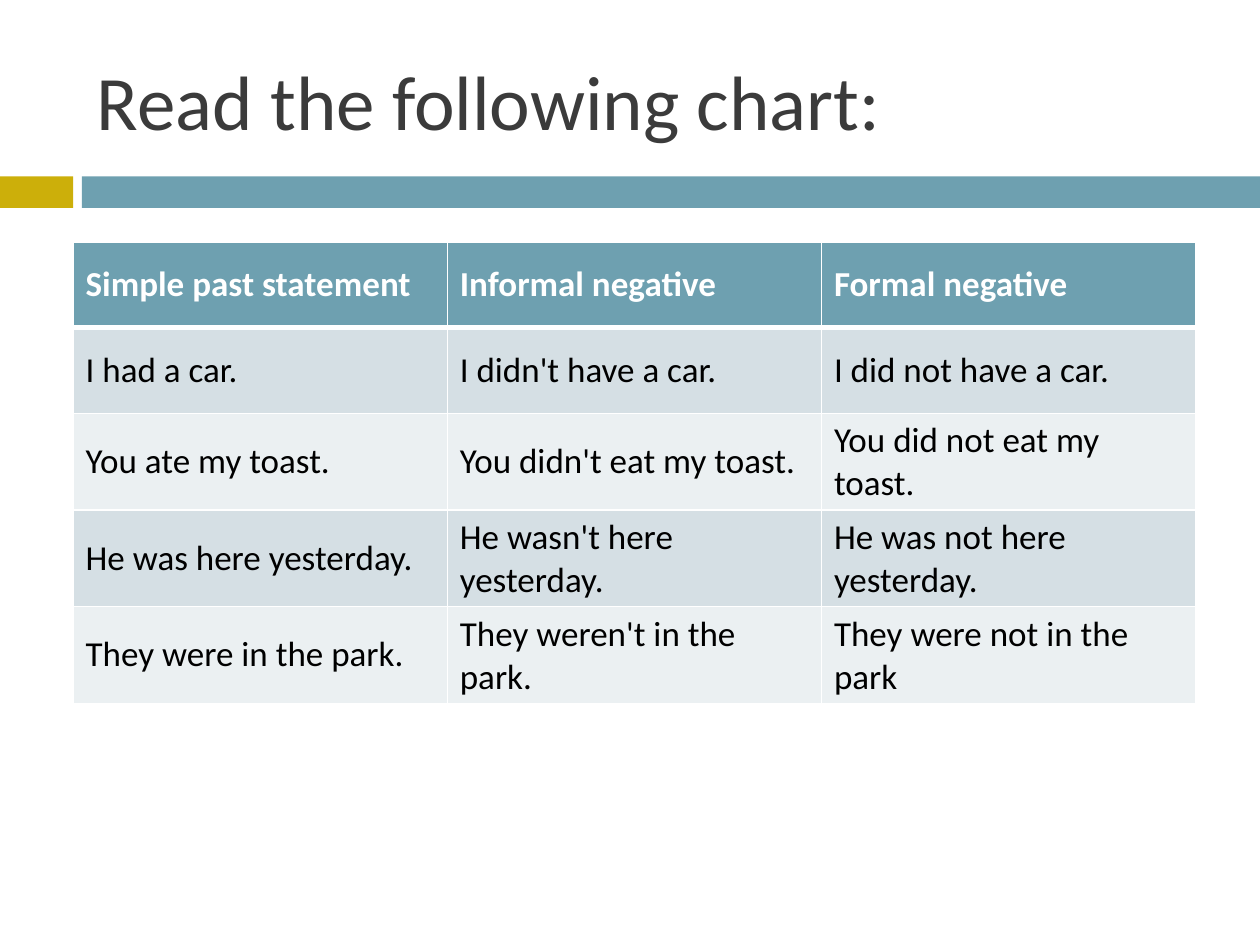
from lxml import etree
from pptx import Presentation, util as u
from pptx.dml.color import RGBColor
from pptx.enum import shapes, text
from pptx.oxml.ns import qn

FONT = "Calibri"
WHITE = RGBColor(0xFF, 0xFF, 0xFF)
BLACK = RGBColor(0x00, 0x00, 0x00)
CHARCOAL = RGBColor(0x3B, 0x3B, 0x3B)
GOLD = RGBColor(0xCC, 0xAF, 0x0A)
TEAL = RGBColor(0x6E, 0xA0, 0xB0)
BANDS = (RGBColor(0xD5, 0xDF, 0xE4), RGBColor(0xEB, 0xF0, 0xF2))

WIDTH, HEIGHT = 10, 7.5
MARGIN = 0.58
BAR_TOP, BAR_HEIGHT, BAR_GAP = 1.4, 0.25, 0.07
COLUMN, ROW = 2.97, 0.68

SENTENCES = (
    ("Simple past statement", "Informal negative", "Formal negative"),
    ("I had a car.", "I didn't have a car.", "I did not have a car."),
    ("You ate my toast.", "You didn't eat my toast.", "You did not eat my toast."),
    ("He was here yesterday.", "He wasn't here yesterday.", "He was not here yesterday."),
    ("They were in the park.", "They weren't in the park.", "They were not in the park"),
)


def inches(*lengths):
    return [u.Inches(length) for length in lengths]


def add_run(p, words, size, color, bold=False):
    r = p.add_run()
    r.text = words
    r.font.name = FONT
    r.font.size = u.Pt(size)
    r.font.bold = bold
    r.font.color.rgb = color


def add_bar(s, left, width, color):
    sp = s.shapes.add_shape(shapes.MSO_SHAPE.RECTANGLE,
                            *inches(left, BAR_TOP, width, BAR_HEIGHT))
    sp.shadow.inherit = False
    sp.fill.solid()
    sp.fill.fore_color.rgb = color
    sp.line.fill.background()


def add_title(s, words):
    tf = s.shapes.add_textbox(*inches(0.67, 0.25, 8.92, 1.08)).text_frame
    tf.word_wrap = True
    tf.vertical_anchor = text.MSO_ANCHOR.MIDDLE
    add_run(tf.paragraphs[0], words, 44, CHARCOAL)


def set_borders(cell, **widths):
    """Draw white borders; widths in points, keyed by side L, R, T, B."""
    tc_pr = cell._tc.get_or_add_tcPr()
    for side, points in widths.items():
        ln = etree.SubElement(tc_pr, qn(f"a:ln{side}"), w=str(u.Pt(points)))
        fill = etree.SubElement(ln, qn("a:solidFill"))
        etree.SubElement(fill, qn("a:srgbClr"), val=str(WHITE))


def fill_cell(cell, words, row):
    header = row == 0
    set_borders(cell, L=1, R=1, T=3 if row == 1 else 1, B=3 if header else 1)
    cell.fill.solid()
    cell.fill.fore_color.rgb = TEAL if header else BANDS[(row - 1) % 2]
    cell.vertical_anchor = text.MSO_ANCHOR.MIDDLE
    add_run(cell.text_frame.paragraphs[0], words, 20,
            WHITE if header else BLACK, bold=header)


def add_sentence_table(s):
    rows, columns = len(SENTENCES), len(SENTENCES[0])
    table = s.shapes.add_table(
        rows, columns,
        *inches(MARGIN, 1.92, columns * COLUMN, rows * ROW)).table
    for row, sentences in enumerate(SENTENCES):
        for column, words in enumerate(sentences):
            fill_cell(table.cell(row, column), words, row)


def main():
    prs = Presentation()
    prs.slide_width, prs.slide_height = inches(WIDTH, HEIGHT)
    s = prs.slides.add_slide(prs.slide_layouts[6])
    bar_left = MARGIN + BAR_GAP
    add_bar(s, 0, MARGIN, GOLD)
    add_bar(s, bar_left, WIDTH - bar_left, TEAL)
    add_title(s, "Read the following chart:")
    add_sentence_table(s)
    prs.save("out.pptx")


if __name__ == "__main__":
    main()
